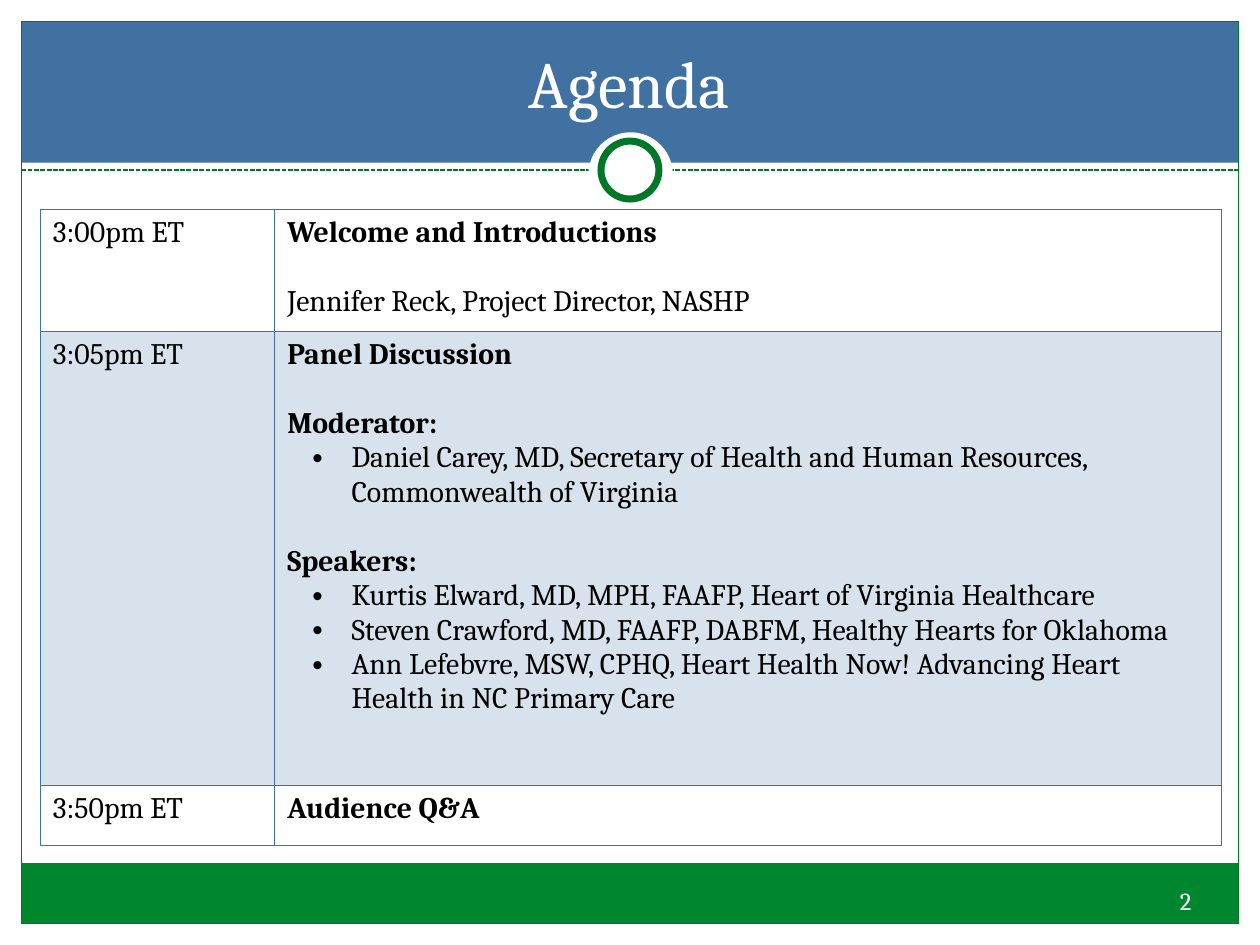
from pptx import Presentation
from pptx.dml.color import RGBColor
from pptx.enum.dml import MSO_LINE
from pptx.enum.shapes import MSO_CONNECTOR, MSO_SHAPE
from pptx.enum.text import MSO_ANCHOR, PP_ALIGN
from pptx.oxml.ns import qn
from pptx.util import Inches, Pt
from lxml.etree import SubElement

BLUE = RGBColor(0x40, 0x71, 0xA0)
GREEN = RGBColor(0x00, 0x86, 0x2F)
DARK_GREEN = RGBColor(0x00, 0x76, 0x29)
WHITE = RGBColor(0xFF, 0xFF, 0xFF)
BLACK = RGBColor(0, 0, 0)
FONT = "Cambria"
BLANK_LINE = Pt(19.7)

HEADING, TEXT, BULLET = "heading", "text", "bullet"
AGENDA = [
    ("3:00pm ET", 0.97, [
        (HEADING, "Welcome and Introductions", False),
        (TEXT, "Jennifer Reck, Project Director, NASHP", True),
    ]),
    ("3:05pm ET", 3.6, [
        (HEADING, "Panel Discussion", False),
        (HEADING, "Moderator:", True),
        (BULLET, "Daniel Carey, MD, Secretary of Health and Human Resources, "
                 "Commonwealth of Virginia", False),
        (HEADING, "Speakers:", True),
        (BULLET, "Kurtis Elward, MD, MPH, FAAFP, Heart of Virginia Healthcare", False),
        (BULLET, "Steven Crawford, MD, FAAFP, DABFM, Healthy Hearts for Oklahoma", False),
        (BULLET, "Ann Lefebvre, MSW, CPHQ, Heart Health Now! Advancing Heart "
                 "Health in NC Primary Care", False),
    ]),
    ("3:50pm ET", 0.48, [(HEADING, "Audience Q&A", False)]),
]


def style_runs(paragraph, size, color, bold=False):
    for run in paragraph.runs:
        run.font.name = FONT
        run.font.size = Pt(size)
        run.font.bold = bold
        run.font.color.rgb = color


def add_panel(slide, kind, box, fill=None, line=None, width=0.75):
    panel = slide.shapes.add_shape(kind, *map(Inches, box))
    panel.shadow.inherit = False
    if fill is None:
        panel.fill.background()
    else:
        panel.fill.solid()
        panel.fill.fore_color.rgb = fill
    if line is None:
        panel.line.fill.background()
    else:
        panel.line.color.rgb = line
        panel.line.width = Pt(width)


def add_frame(slide, box):
    left, top, width, height = box
    add_panel(slide, MSO_SHAPE.RECTANGLE, (left, top, width, 1.12), BLUE)
    add_panel(slide, MSO_SHAPE.RECTANGLE, (left, top + height - 0.48, width, 0.48), GREEN)
    add_panel(slide, MSO_SHAPE.RECTANGLE, box, line=DARK_GREEN)

    divider_y = top + 1.18
    divider = slide.shapes.add_connector(
        MSO_CONNECTOR.STRAIGHT, Inches(left), Inches(divider_y),
        Inches(left + width), Inches(divider_y))
    divider.line.color.rgb = DARK_GREEN
    divider.line.width = Pt(0.9)
    divider.line.dash_style = MSO_LINE.SQUARE_DOT
    SubElement(divider._element.spPr, qn("a:effectLst"))

    center = left + width / 2
    add_panel(slide, MSO_SHAPE.OVAL, (center - 0.33, divider_y - 0.3, 0.67, 0.67), WHITE)
    add_panel(slide, MSO_SHAPE.OVAL, (center - 0.23, divider_y - 0.23, 0.46, 0.46),
              WHITE, DARK_GREEN, 4)


def add_bullet(paragraph):
    properties = paragraph._p.get_or_add_pPr()
    properties.set("marL", str(Inches(0.51)))
    properties.set("indent", str(Inches(-0.31)))
    SubElement(properties, qn("a:buFont"), typeface="Arial")
    SubElement(properties, qn("a:buChar"), char="•")


def style_cell(cell, shaded):
    properties = cell._tc.get_or_add_tcPr()
    for side in ("lnL", "lnR", "lnT", "lnB"):
        border = SubElement(properties, qn(f"a:{side}"), w=str(Pt(0.5)))
        border_fill = SubElement(border, qn("a:solidFill"))
        SubElement(border_fill, qn("a:srgbClr"), val=str(BLUE))
    if shaded:
        cell.fill.solid()
        cell.fill.fore_color.rgb = BLUE
        tint = properties.find(qn("a:solidFill")).find(qn("a:srgbClr"))
        SubElement(tint, qn("a:alpha"), val="20000")
    else:
        cell.fill.background()


def fill_cell(cell, entries):
    frame = cell.text_frame
    frame.text = "\n".join(text for _, text, _ in entries)
    for paragraph, (role, _, gap_before) in zip(frame.paragraphs, entries):
        if role == BULLET:
            add_bullet(paragraph)
        if gap_before:
            paragraph.space_before = BLANK_LINE
        style_runs(paragraph, 17, BLACK, bold=role == HEADING)


def add_agenda(slide, box):
    agenda = slide.shapes.add_table(len(AGENDA), 2, *map(Inches, box)).table
    agenda.first_row = False
    agenda.horz_banding = False
    time_width = 1.86
    agenda.columns[0].width = Inches(time_width)
    agenda.columns[1].width = Inches(box[2] - time_width)
    for index, (time, height, entries) in enumerate(AGENDA):
        agenda.rows[index].height = Inches(height)
        for column, content in enumerate(([(TEXT, time, False)], entries)):
            cell = agenda.cell(index, column)
            style_cell(cell, shaded=index % 2 == 1)
            fill_cell(cell, content)


def place_title(slide, box):
    title = slide.shapes.title
    title.left, title.top, title.width, title.height = map(Inches, box)
    slide.shapes._spTree.append(title._element)
    frame = title.text_frame
    frame.text = "Agenda"
    frame.vertical_anchor = MSO_ANCHOR.BOTTOM
    frame.paragraphs[0].alignment = PP_ALIGN.CENTER
    style_runs(frame.paragraphs[0], 37.8, WHITE)


def add_page_number(slide, box):
    frame = slide.shapes.add_textbox(*map(Inches, box)).text_frame
    frame.text = "2"
    frame.word_wrap = True
    frame.vertical_anchor = MSO_ANCHOR.MIDDLE
    frame.margin_left = frame.margin_right = Inches(0.05)
    frame.paragraphs[0].alignment = PP_ALIGN.CENTER
    style_runs(frame.paragraphs[0], 14, WHITE)


def main():
    deck = Presentation()
    deck.slide_width, deck.slide_height = Inches(10), Inches(7.5)
    slide = deck.slides.add_slide(deck.slide_layouts[5])
    add_frame(slide, (0.17, 0.17, 9.66, 7.16))
    add_agenda(slide, (0.32, 1.66, 9.37, 5.05))
    place_title(slide, (0.82, 0.35, 8.35, 0.67))
    add_page_number(slide, (9.16, 6.91, 0.5, 0.48))
    deck.save("out.pptx")


if __name__ == "__main__":
    main()
